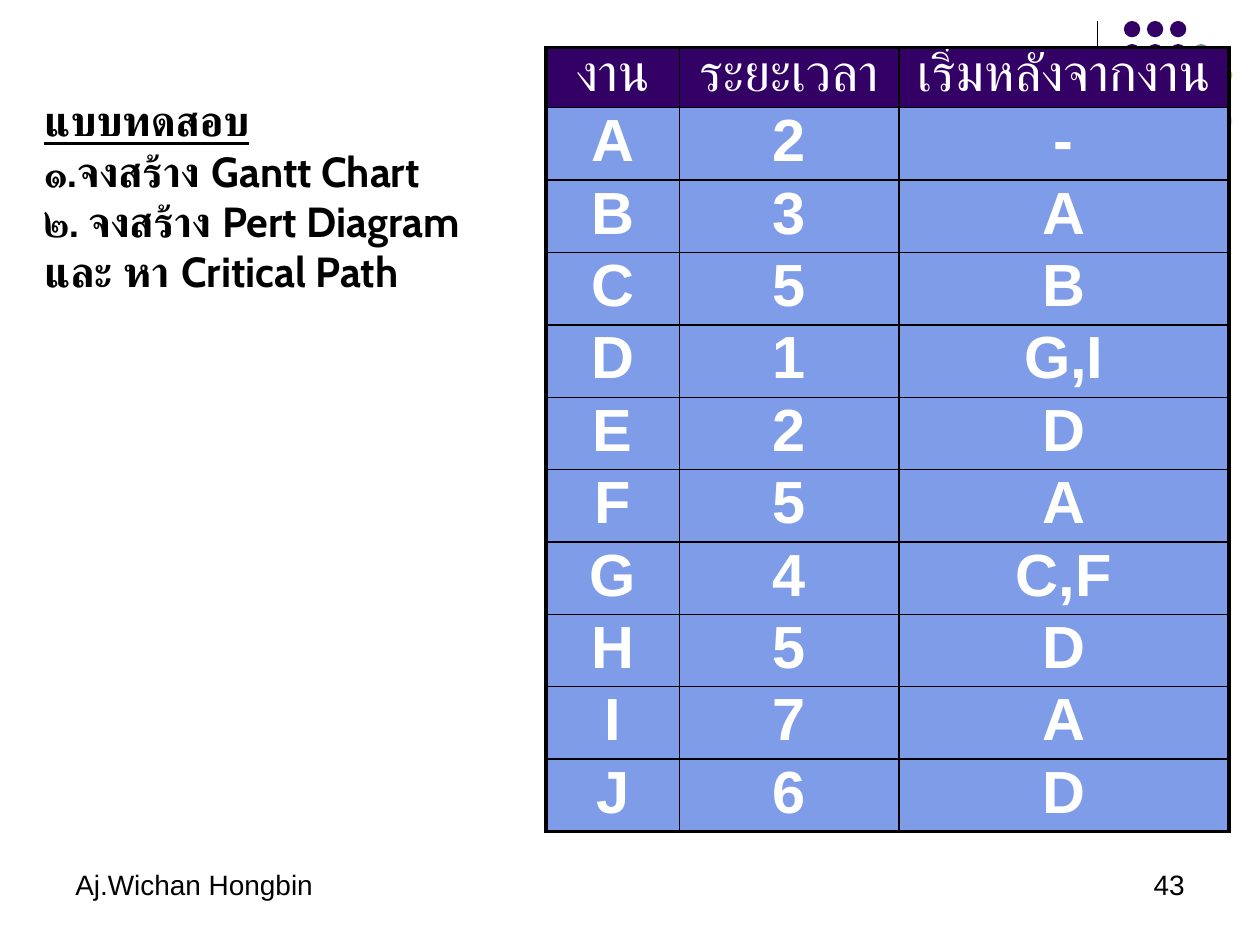
import dataclasses
import typing

import lxml.etree
import pptx
import pptx.dml.color
import pptx.enum.shapes
import pptx.enum.text
import pptx.oxml.ns
import pptx.slide
import pptx.table
import pptx.text.text
import pptx.util

Inches = pptx.util.Inches
Align = pptx.enum.text.PP_ALIGN


@dataclasses.dataclass(frozen=True)
class Theme:
    black: str = "000000"
    white: str = "FFFFFF"
    purple: str = "330066"
    teal: str = "669999"
    yellow: str = "CCCC00"
    lavender: str = "D8D8EC"
    cell_blue: str = "7E9CE8"
    table_font: str = "Arial"
    question_font: str = "Cabin"
    footer_size: float = 16
    question_size: float = 24
    header_size: float = 30
    cell_size: float = 34
    thin_line: float = 1
    thick_line: float = 2.25


THEME = Theme()


@dataclasses.dataclass(frozen=True)
class TextStyle:
    font: str
    size: float
    color: str
    bold: bool = False
    underline: bool = False


@dataclasses.dataclass(frozen=True)
class TextBlock:
    left: float
    top: float
    width: float
    height: float
    lines: tuple[tuple[str, TextStyle], ...]
    alignment: Align = Align.LEFT


class Task(typing.NamedTuple):
    name: str
    duration: str
    starts_after: str


FOOTER = TextStyle(THEME.table_font, THEME.footer_size, THEME.black)
QUESTION = TextStyle(THEME.question_font, THEME.question_size, THEME.black, bold=True)
HEADING = dataclasses.replace(QUESTION, underline=True)
TABLE_HEADER = TextStyle(THEME.table_font, THEME.header_size, THEME.white)
TABLE_CELL = TextStyle(THEME.table_font, THEME.cell_size, THEME.white, bold=True)

# The layout sits on sixths of an inch; the question box on a finer grid
SIXTH = 1 / 6
FINE = 1 / 576
FOOTER_TOP, FOOTER_WIDTH = 41 * SIXTH, 14 * SIXTH

TEXT_BLOCKS = (
    TextBlock(0.5, FOOTER_TOP, FOOTER_WIDTH, 0.5, (("Aj.Wichan Hongbin", FOOTER),)),
    TextBlock(43 * SIXTH, FOOTER_TOP, FOOTER_WIDTH, 0.5, (("43", FOOTER),), Align.RIGHT),
    TextBlock(146 * FINE, 405 * FINE, 3.88, 2.1, (
        ("แบบทดสอบ", HEADING),
        ("๑.จงสร้าง Gantt Chart", QUESTION),
        ("๒. จงสร้าง Pert Diagram และ หา Critical Path", QUESTION),
    )),
)

TASKS = (
    Task("งาน", "ระยะเวลา", "เริ่มหลังจากงาน"),
    Task("A", "2", "-"),
    Task("B", "3", "A"),
    Task("C", "5", "B"),
    Task("D", "1", "G,I"),
    Task("E", "2", "D"),
    Task("F", "5", "A"),
    Task("G", "4", "C,F"),
    Task("H", "5", "D"),
    Task("I", "7", "A"),
    Task("J", "6", "D"),
)
TABLE_LEFT, TABLE_TOP = 26 * SIXTH, 3 / 8
COLUMN_WIDTHS = (1.06, 1.74, 2.62)
HEADER_HEIGHT, ROW_HEIGHT = 0.48, 0.57

# Each letter is one dot of the corner pattern; a space leaves a gap
DOT_ROWS = ("PPP", "PPPT", "PPTTY", "PTTY", "TTYYL", "TYYL", "YYLL", " L L")
DOT_COLORS = {"P": THEME.purple, "T": THEME.teal, "Y": THEME.yellow, "L": THEME.lavender}
DOT_SIZE = 0.13
DOT_PITCH = 1.28 / (len(DOT_ROWS) - 1)


def rgb(color: str) -> pptx.dml.color.RGBColor:
    return pptx.dml.color.RGBColor.from_string(color)


def add_run(paragraph: pptx.text.text._Paragraph, text: str, style: TextStyle) -> None:
    run = paragraph.add_run()
    run.text = text
    run.font.name = style.font
    run.font.size = pptx.util.Pt(style.size)
    run.font.bold = style.bold
    run.font.underline = style.underline
    run.font.color.rgb = rgb(style.color)


def draw_corner(slide: pptx.slide.Slide) -> None:
    line = slide.shapes.add_connector(
        pptx.enum.shapes.MSO_CONNECTOR.STRAIGHT,
        Inches(8.71), Inches(SIXTH), Inches(8.71), Inches(11 * SIXTH))
    line.line.color.rgb = rgb(THEME.black)
    line.line.width = pptx.util.Pt(0.75)
    lxml.etree.SubElement(line._element.spPr, pptx.oxml.ns.qn("a:effectLst"))

    for row, letters in enumerate(DOT_ROWS):
        for column, letter in enumerate(letters):
            if letter == " ":
                continue
            dot = slide.shapes.add_shape(
                pptx.enum.shapes.MSO_SHAPE.OVAL,
                Inches(8.92 + column * DOT_PITCH), Inches(SIXTH + row * DOT_PITCH),
                Inches(DOT_SIZE), Inches(DOT_SIZE))
            dot.shadow.inherit = False
            dot.fill.solid()
            dot.fill.fore_color.rgb = rgb(DOT_COLORS[letter])
            dot.line.fill.background()


def draw_text(slide: pptx.slide.Slide, block: TextBlock) -> None:
    shape = slide.shapes.add_textbox(
        Inches(block.left), Inches(block.top), Inches(block.width), Inches(block.height))
    frame = shape.text_frame
    frame.word_wrap = True
    for index, (text, style) in enumerate(block.lines):
        paragraph = frame.add_paragraph() if index else frame.paragraphs[0]
        paragraph.alignment = block.alignment
        add_run(paragraph, text, style)


def set_border(cell: pptx.table._Cell, side: str, width: float) -> None:
    qn = pptx.oxml.ns.qn
    properties = cell._tc.get_or_add_tcPr()
    border = lxml.etree.SubElement(
        properties, qn(f"a:ln{side}"), w=str(int(pptx.util.Pt(width))))
    fill = lxml.etree.SubElement(border, qn("a:solidFill"))
    lxml.etree.SubElement(fill, qn("a:srgbClr"), val=THEME.black)


def draw_table(slide: pptx.slide.Slide) -> None:
    row_count, column_count = len(TASKS), len(COLUMN_WIDTHS)
    height = HEADER_HEIGHT + ROW_HEIGHT * (row_count - 1)
    table = slide.shapes.add_table(
        row_count, column_count, Inches(TABLE_LEFT), Inches(TABLE_TOP),
        Inches(sum(COLUMN_WIDTHS)), Inches(height)).table
    table.horz_banding = False
    table.first_row = False
    for column, width in zip(table.columns, COLUMN_WIDTHS):
        column.width = Inches(width)

    for row, task in enumerate(TASKS):
        is_header = row == 0
        table.rows[row].height = Inches(HEADER_HEIGHT if is_header else ROW_HEIGHT)
        for column, text in enumerate(task):
            cell = table.cell(row, column)
            # Thick lines on the outer edge, thin ones inside
            outer_edges = {
                "L": column == 0, "R": column == column_count - 1,
                "T": is_header, "B": row == row_count - 1,
            }
            for side, is_outer in outer_edges.items():
                set_border(cell, side, THEME.thick_line if is_outer else THEME.thin_line)
            cell.fill.solid()
            cell.fill.fore_color.rgb = rgb(THEME.purple if is_header else THEME.cell_blue)
            paragraph = cell.text_frame.paragraphs[0]
            paragraph.alignment = Align.CENTER
            paragraph.line_spacing = 0.9
            add_run(paragraph, text, TABLE_HEADER if is_header else TABLE_CELL)


def main() -> None:
    presentation = pptx.Presentation()
    presentation.slide_width = Inches(10)
    presentation.slide_height = Inches(7.5)
    slide = presentation.slides.add_slide(presentation.slide_layouts[6])
    draw_corner(slide)
    draw_table(slide)
    for block in TEXT_BLOCKS:
        draw_text(slide, block)
    presentation.save("out.pptx")


if __name__ == "__main__":
    main()
